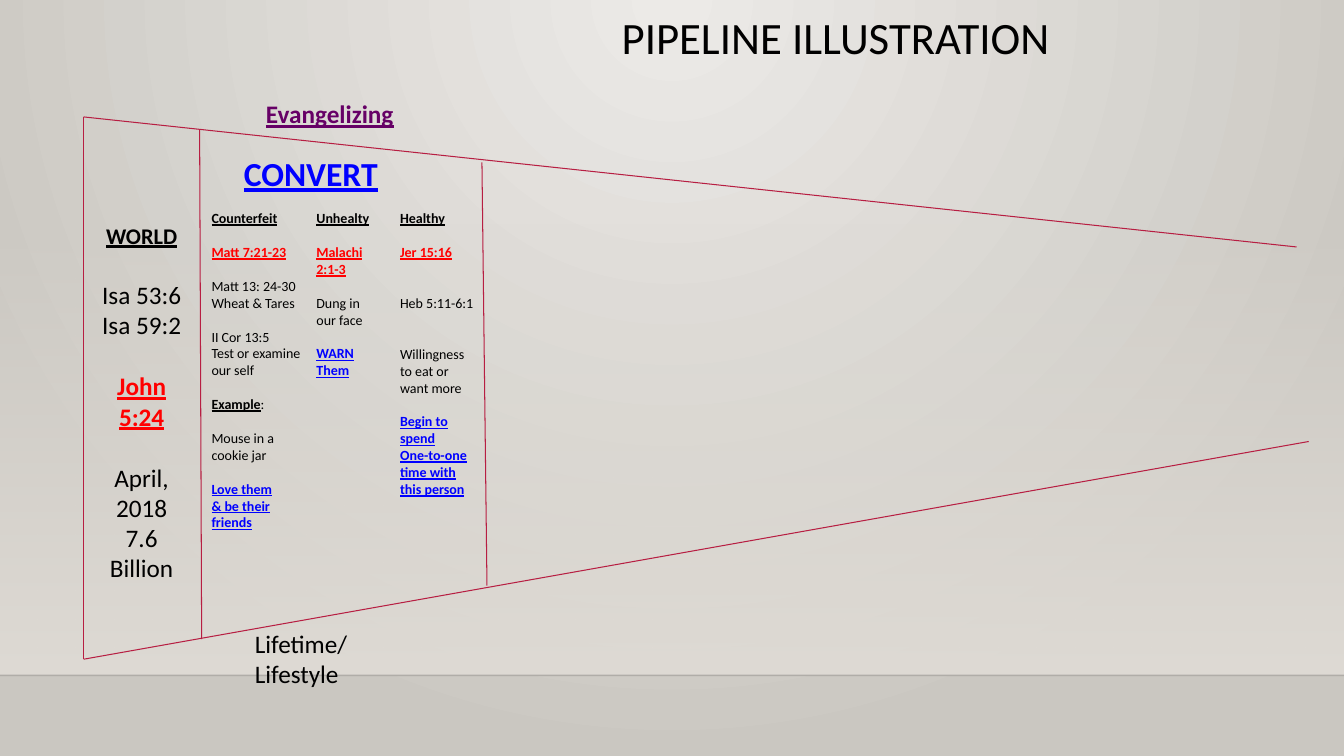
from dataclasses import dataclass

import pptx
import pptx.dml.color
import pptx.enum.shapes
import pptx.enum.text
import pptx.oxml
import pptx.oxml.ns
import pptx.util
from pptx.util import Inches

ALIGN = pptx.enum.text.PP_ALIGN


@dataclass(frozen=True)
class Theme:
    """Colours, font and type sizes of the slide."""
    font: str = "Calibri"
    black: str = "000000"
    red: str = "FF0000"
    blue: str = "0000FF"
    purple: str = "660066"
    pipe: str = "B71E42"
    glow: str = "ECEAE7"
    edge: str = "CAC7C1"
    wall: str = "DFDBD5"
    title: int = 32
    stage: int = 24
    body: int = 18
    world: int = 16
    note: int = 10
    line_height: float = 1.22


THEME = Theme()
PLAIN = {"color": THEME.black}
HEAD = {"color": THEME.black, "strong": True}
VERSE = {"color": THEME.red, "strong": True}
ACTION = {"color": THEME.blue, "strong": True}

WORLD = [
    (0, [("WORLD", HEAD | {"size": THEME.world})]),
    (1, [("Isa 53:6", PLAIN)]),
    (0, [("Isa 59:2", PLAIN)]),
    (1, [("John 5:24", VERSE)]),
    (1, [("April, 2018", PLAIN)]),
    (0, [("7.6 Billion", PLAIN)]),
]
COUNTERFEIT = [
    (0, [("Counterfeit", HEAD)]),
    (1, [("Matt 7:21-23", VERSE)]),
    (1, [("Matt 13: 24-30", PLAIN)]),
    (0, [("Wheat & Tares", PLAIN)]),
    (1, [("II Cor 13:5", PLAIN)]),
    (0, [("Test or examine", PLAIN)]),
    (0, [("our self", PLAIN)]),
    (1, [("Example", HEAD), (":", PLAIN)]),
    (1, [("Mouse in a cookie jar", PLAIN)]),
    (1, [("Love them", ACTION)]),
    (0, [("& be their", ACTION)]),
    (0, [("friends", ACTION)]),
]
UNHEALTHY = [
    (0, [("Unhealty", HEAD)]),
    (1, [("Malachi", VERSE)]),
    (0, [("2:1-3", VERSE)]),
    (1, [("Dung in", PLAIN)]),
    (0, [("our face", PLAIN)]),
    (1, [("WARN", ACTION)]),
    (0, [("Them", ACTION)]),
]
HEALTHY = [
    (0, [("Healthy", HEAD)]),
    (1, [("Jer 15:16", VERSE)]),
    (2, [("Heb 5:11-6:1", PLAIN)]),
    (2, [("Willingness", PLAIN)]),
    (0, [("to eat or", PLAIN)]),
    (0, [("want more", PLAIN)]),
    (1, [("Begin to", ACTION)]),
    (0, [("spend", ACTION)]),
    (0, [("One-to-one", ACTION)]),
    (0, [("time with", ACTION)]),
    (0, [("this person", ACTION)]),
]


def gradient(stops, direction):
    """Return a gradient fill element from (position, colour, opacity) stops."""
    marks = "".join(
        f'<a:gs pos="{place * 1000}"><a:srgbClr val="{color}">'
        f'<a:alpha val="{opacity * 1000}"/></a:srgbClr></a:gs>'
        for place, color, opacity in stops)
    return pptx.oxml.parse_xml(
        f'<a:gradFill {pptx.oxml.ns.nsdecls("a")} rotWithShape="1">'
        f'<a:gsLst>{marks}</a:gsLst>{direction}</a:gradFill>')


def swap_fill(properties, fill):
    """Put a gradient in the place of a solid fill."""
    properties.replace(properties.find(pptx.oxml.ns.qn("a:solidFill")), fill)


def write(slide, box, text, size=THEME.body, align=ALIGN.LEFT, spacing=None,
          wrap=True, **style):
    """Write a string, or (gap, runs) paragraphs, in a box."""
    frame = slide.shapes.add_textbox(*map(Inches, box)).text_frame
    frame.word_wrap = wrap
    paragraphs = [(0, [(text, style)])] if isinstance(text, str) else text
    for index, (gap, runs) in enumerate(paragraphs):
        paragraph = frame.add_paragraph() if index else frame.paragraphs[0]
        paragraph.alignment = align
        paragraph.line_spacing = spacing
        if gap:
            paragraph.space_before = pptx.util.Pt(
                round(gap * size * THEME.line_height, 1))
        for words, look in runs:
            run = paragraph.add_run()
            run.text = words
            run.font.name = THEME.font
            run.font.size = pptx.util.Pt(look.get("size", size))
            run.font.bold = run.font.underline = look.get("strong", False)
            run.font.color.rgb = pptx.dml.color.RGBColor.from_string(
                look["color"])


def draw_line(slide, start, end, color=THEME.pipe, weight=0.75, opacity=100):
    """Draw a straight line between two points."""
    line = slide.shapes.add_connector(
        pptx.enum.shapes.MSO_CONNECTOR.STRAIGHT,
        *map(Inches, (*start, *end)))
    line.line.width = pptx.util.Pt(weight)
    line.line.color.rgb = pptx.dml.color.RGBColor.from_string(color)
    tint = line._element.spPr.find(".//" + pptx.oxml.ns.qn("a:srgbClr"))
    if opacity < 100:
        tint.append(pptx.oxml.parse_xml(
            f'<a:alpha {pptx.oxml.ns.nsdecls("a")} val="{opacity * 1000}"/>'))
    line._element.spPr.append(pptx.oxml.parse_xml(
        f'<a:effectLst {pptx.oxml.ns.nsdecls("a")}/>'))


def draw_backdrop(slide, left, top, width, height):
    """Draw the lit background, the wall and the floor edge."""
    slide.background.fill.solid()
    swap_fill(
        slide._element.find(".//" + pptx.oxml.ns.qn("p:bgPr")),
        gradient([(0, THEME.glow, 100), (100, THEME.edge, 100)],
                 '<a:path path="circle"><a:fillToRect l="43000" t="0" '
                 'r="43000" b="100000"/></a:path>'))
    wall = slide.shapes.add_shape(
        pptx.enum.shapes.MSO_SHAPE.RECTANGLE,
        *map(Inches, (left, top, width, height)))
    wall.shadow.inherit = False
    wall.line.fill.background()
    wall.fill.solid()
    swap_fill(wall._element.spPr,
              gradient([(0, THEME.wall, 0), (100, THEME.wall, 100)],
                       '<a:lin ang="5400000" scaled="0"/>'))
    floor = top + height
    draw_line(slide, (left, floor), (left + width, floor),
              color=THEME.black, weight=1, opacity=20)


def draw_pipeline(slide, left, top, width, height):
    """Draw the narrowing pipe and its dividers."""
    bottom = top + height
    draw_line(slide, (left, top), (left + width - 0.12, top + 1.29))
    draw_line(slide, (left, bottom), (left + width, bottom - 2.16))
    draw_line(slide, (left, top), (left, bottom))
    draw_line(slide, (left + 1.15, top + 0.13), (left + 1.17, bottom - 0.2))
    draw_line(slide, (left + 3.95, top + 0.45), (left + 4, bottom - 0.73))


def write_convert(slide, left, top):
    """Write the convert stage: its name, three columns and outer labels."""
    columns = [(0, 1.13, 3.47, COUNTERFEIT), (1.04, 1.23, 1.78, UNHEALTHY),
               (1.87, 0.96, 2.96, HEALTHY)]
    for offset, width, height, notes in columns:
        write(slide, (left + offset, top + 0.56, width, height), notes,
              size=THEME.note)
    write(slide, (left + 0.32, top, 2.01, 0.5), "CONVERT",
          size=THEME.stage, **ACTION)
    write(slide, (left + 0.54, top - 0.54, 1.66, 0.4), "Evangelizing",
          wrap=False, color=THEME.purple, strong=True)
    write(slide, (left + 0.43, top + 4.71, 1.9, 0.4), "Lifetime/Lifestyle",
          **PLAIN)


def main():
    """Build the slide and save it."""
    deck = pptx.Presentation()
    deck.slide_width, deck.slide_height = Inches(13.33), Inches(7.5)
    slide = deck.slides.add_slide(deck.slide_layouts[6])
    draw_backdrop(slide, 0, 2.21, 13.33, 4.49)
    write(slide, (3.04, 0.11, 10.5, 1.15), "PIPELINE ILLUSTRATION",
          size=THEME.title, align=ALIGN.CENTER, spacing=0.9, **PLAIN)
    draw_pipeline(slide, 0.83, 1.16, 12.15, 5.38)
    write(slide, (0.84, 2.15, 1.13, 3.7), WORLD, align=ALIGN.CENTER)
    write_convert(slide, 2, 1.47)
    deck.save("out.pptx")


if __name__ == "__main__":
    main()
